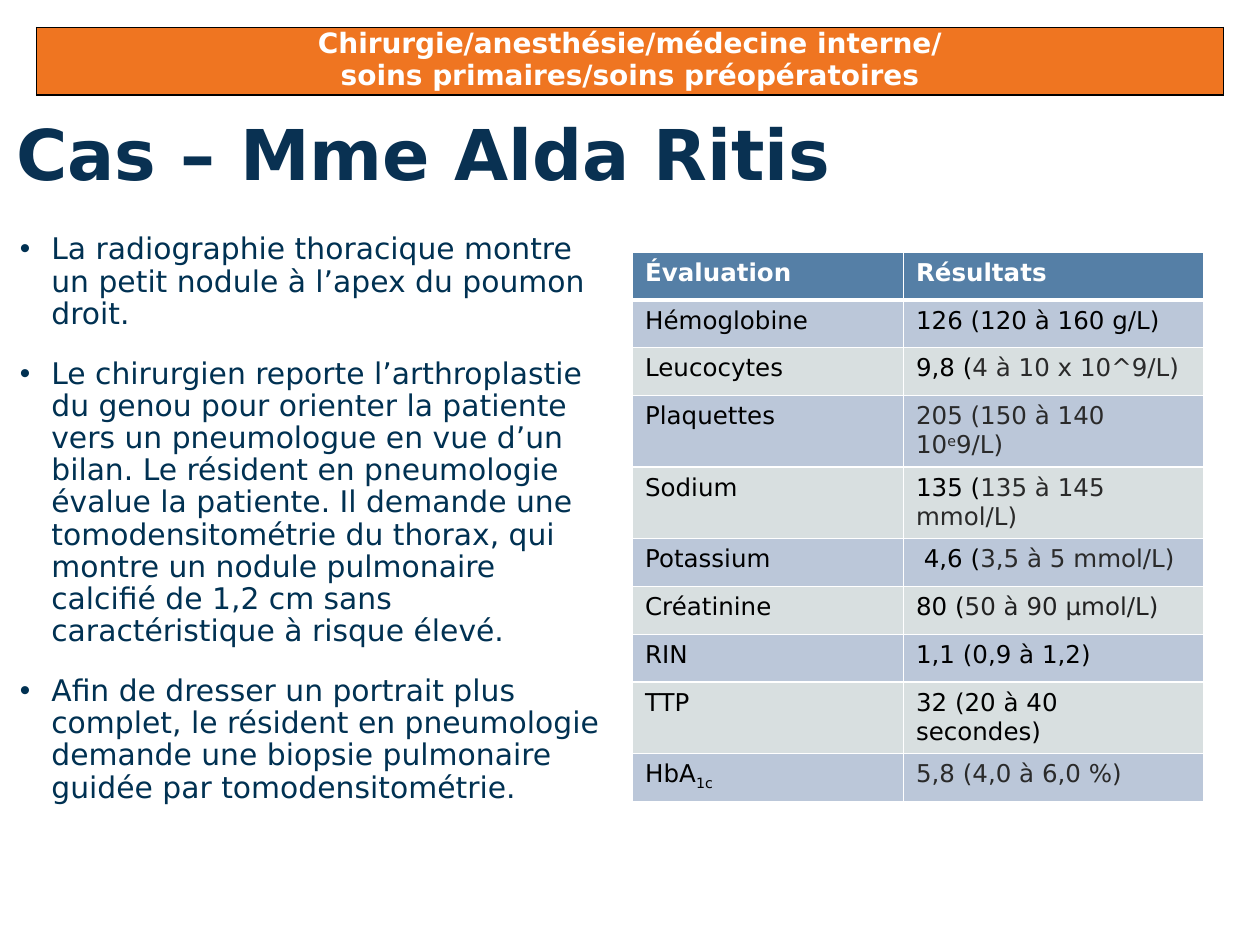
from lxml.etree import SubElement as Sub
from pptx import Presentation
from pptx.dml.color import RGBColor as Rgb
from pptx.enum.text import MSO_ANCHOR as Anchor, PP_ALIGN as Align
from pptx.oxml.ns import qn
from pptx.util import Inches as In, Pt

FONT, NAVY, WHITE, BLACK, GREY = "DejaVu Sans", "003152", "FFFFFF", "000000", "2A2A2A"
HEAD, BANDS = "557FA6", ("BBC7D9", "D8DFE0")

BANNER = "Chirurgie/anesthésie/médecine interne/\nsoins primaires/soins préopératoires"
TITLE = "Cas – Mme Alda Ritis"
POINTS = [
    "La radiographie thoracique montre un petit nodule à l’apex du poumon droit.",
    "Le chirurgien reporte l’arthroplastie du genou pour orienter la patiente vers un "
    "pneumologue en vue d’un bilan. Le résident en pneumologie évalue la patiente. Il demande "
    "une tomodensitométrie du thorax, qui montre un nodule pulmonaire calcifié de 1,2 cm sans "
    "caractéristique à risque élevé.",
    "Afin de dresser un portrait plus complet, le résident en pneumologie demande une biopsie "
    "pulmonaire guidée par tomodensitométrie.",
]
LABS = [
    ("Évaluation", "Résultats "),
    ("Hémoglobine", "126 (120 à 160 g/L)"),
    ("Leucocytes", [("9,8 (",), ("4 à 10 x 10^9/L)", GREY)]),
    ("Plaquettes", [("205 (150 à 140 10", GREY), ("e", GREY, 30), ("9/L)", GREY)]),
    ("Sodium", [("135 (",), ("135 à 145 mmol/L)", GREY)]),
    ("Potassium", [(" 4,6 (",), ("3,5 à 5 mmol/L)", GREY)]),
    ("Créatinine", [("80 (",), ("50 à 90 µmol/L)", "222222")]),
    ("RIN", "1,1 (0,9 à 1,2)"),
    ("TTP", "32 (20 à 40 secondes)"),
    ([("HbA",), ("1c", BLACK, -25)], [("5,8 (4,0 à 6,0 %)", GREY)]),
]


def rgb(code):
    return Rgb.from_string(code)


def write(para, text, size=14, color=BLACK, bold=False, align=None, line=None):
    para.alignment = align
    if line:
        para.line_spacing = line
    parts = [(text,)] if isinstance(text, str) else text
    for words, tint, base in ((*part, color, 0)[:3] if len(part) == 1 else (*part, 0)[:3]
                              for part in parts):
        for i, piece in enumerate(words.split("\n")):
            if i:
                para.add_line_break()
            run = para.add_run()
            run.text = piece
            font = run.font
            font.name, font.size, font.bold = FONT, Pt(size), bold
            font.color.rgb = rgb(tint)
            if base:
                run._r.get_or_add_rPr().set("baseline", str(base * 1000))


def box(x, y, w, h):
    frame = slide.shapes.add_textbox(In(x), In(y), In(w), In(h)).text_frame
    frame.word_wrap = True
    return frame


def bullet(para):
    prop = para._p.get_or_add_pPr()
    prop.set("marL", str(In(0.25)))
    prop.set("indent", str(-In(0.25)))
    Sub(prop, qn("a:buFont"), typeface="Arial")
    Sub(prop, qn("a:buChar"), char="•")


def grid(x, y, cols, rows):
    frame = slide.shapes.add_table(len(rows), len(cols), In(x), In(y), In(sum(cols)), In(sum(rows)))
    table = frame.table
    for col, w in zip(table.columns, cols):
        col.width = In(w)
    for row, h in zip(table.rows, rows):
        row.height = In(h)
    return table


def paint(cell, fill, edge, base=1):
    prop = cell._tc.get_or_add_tcPr()
    for side in "LRTB":
        width = Pt(base if side == "B" else 1)
        line = Sub(prop, qn("a:ln" + side), w=str(width))
        Sub(Sub(line, qn("a:solidFill")), qn("a:srgbClr"), val=edge)
    cell.fill.solid()
    cell.fill.fore_color.rgb = rgb(fill)


deck = Presentation()
deck.slide_width, deck.slide_height = In(10), In(7.5)
slide = deck.slides.add_slide(deck.slide_layouts[6])

frame = box(0.03, 0.53, 8.62, 1.45)
frame.vertical_anchor = Anchor.MIDDLE
write(frame.paragraphs[0], TITLE, size=40, color="093152", bold=True, line=0.9)

frame = box(0.06, 1.81, 4.87, 4.93)
for i, point in enumerate(POINTS):
    para = frame.add_paragraph() if i else frame.paragraphs[0]
    bullet(para)
    para.space_before, para.space_after = Pt(10 if i else 0), Pt(6)
    write(para, point, size=17, color=NAVY, line=0.9)

table = grid(5.02, 2, (2.15, 2.38), [0.33 if lab[0] == "TTP" else 0.38 for lab in LABS])
for r, lab in enumerate(LABS):
    for c, text in enumerate(lab):
        cell = table.cell(r, c)
        paint(cell, BANDS[(r - 1) % 2] if r else HEAD, WHITE, 1 if r else 3)
        write(cell.text_frame.paragraphs[0], text, color=BLACK if r else WHITE, bold=not r)

cell = grid(0.29, 0.22, [9.42], [0.53]).cell(0, 0)
cell.margin_left = cell.margin_right = In(0.07)
cell.margin_top = cell.margin_bottom = 0
paint(cell, "EF7521", BLACK)
write(cell.text_frame.paragraphs[0], BANNER, size=16, color=WHITE, bold=True, align=Align.CENTER)

deck.save("out.pptx")
